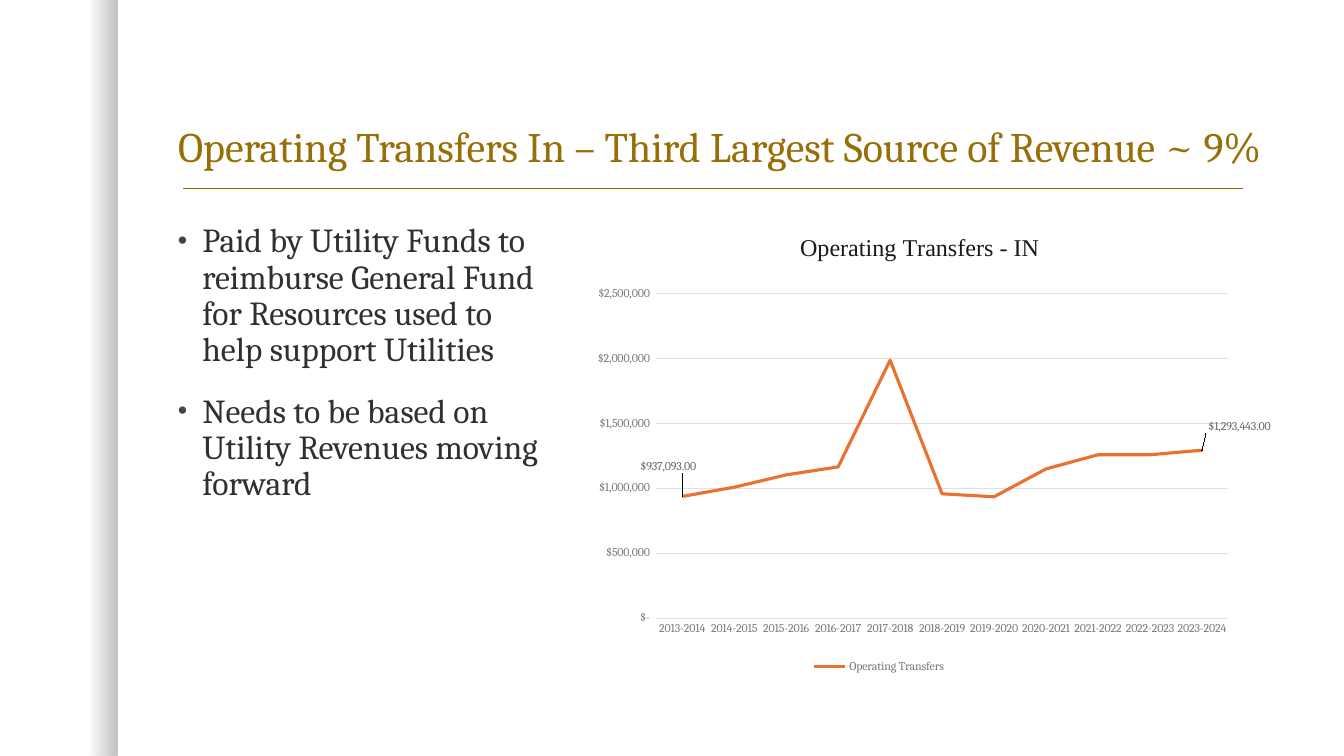
from dataclasses import dataclass

from lxml import etree
from pptx import Presentation
from pptx import util as u
from pptx.chart.data import CategoryChartData
from pptx.dml.color import RGBColor
from pptx.enum import chart as ch
from pptx.enum import shapes, text
from pptx.oxml import ns, parse_xml

COLUMNS, ROWS = 160, 90
SLIDE_W, SLIDE_H = u.Inches(13.33), u.Inches(7.5)

GOLD = RGBColor(0x98, 0x6F, 0x07)
INK = RGBColor(0x30, 0x30, 0x30)
BULLET_GRAY = "454545"
BLACK = RGBColor(0, 0, 0)
TITLE_BLACK = RGBColor(0x1A, 0x1A, 0x1A)
AXIS_GRAY = RGBColor(0x78, 0x78, 0x78)
LABEL_GRAY = RGBColor(0x64, 0x64, 0x64)
GRID_GRAY = RGBColor(0xE0, 0xE0, 0xE0)
ORANGE = RGBColor(0xE9, 0x71, 0x32)

SERIF = "Cambria"
SMALL = 8.5
HANGING = u.Pt(17.5)
AXIS_FORMAT = '_("$"* #,##0_);_("$"* \\(#,##0\\);_("$"* "-"_);_(@_)'
LABEL_FORMAT = '_("$"* #,##0.00_);_("$"* \\(#,##0.00\\);_("$"* "-"??_);_(@_)'
NO_LEADER_LINES = (
    '<c:extLst xmlns:c="http://schemas.openxmlformats.org/drawingml/2006/chart">'
    '<c:ext uri="{CE6537A1-D6FC-4f65-9D91-7224C49458BB}" '
    'xmlns:c15="http://schemas.microsoft.com/office/drawing/2012/chart">'
    '<c15:showLeaderLines val="0"/></c:ext></c:extLst>'
)


@dataclass(frozen=True)
class Area:
    col: float
    row: float
    cols: float
    rows: float

    def box(self) -> tuple[int, int, int, int]:
        return (
            int(SLIDE_W * self.col / COLUMNS),
            int(SLIDE_H * self.row / ROWS),
            int(SLIDE_W * self.cols / COLUMNS),
            int(SLIDE_H * self.rows / ROWS),
        )


@dataclass(frozen=True)
class PointLabel:
    index: int
    position: ch.XL_LABEL_POSITION
    dx: float
    dy: float


BAND = Area(0, 0, 14, 90)
TITLE = Area(20, 5, 138, 16)
RULE = Area(21.75, 22.44, 126.25, 0)
BODY = Area(20, 26.05, 47, 55)
CHART = Area(69, 26, 83, 56)

BULLETS = [
    "Paid by Utility Funds to reimburse General Fund for Resources used to help support Utilities",
    "Needs to be based on Utility Revenues moving forward",
]
FIRST_YEAR = 2013
TRANSFERS = [
    937093, 1008088, 1103002, 1164658, 1986884.4, 957404.51,
    934496, 1149067.28, 1258091.5, 1258091.5, 1293443,
]
POINT_LABELS = [
    PointLabel(0, ch.XL_LABEL_POSITION.ABOVE, -0.02, -0.04),
    PointLabel(len(TRANSFERS) - 1, ch.XL_LABEL_POSITION.RIGHT, 0, -0.05),
]


def style(font, size: float, color: RGBColor, name: str = SERIF) -> None:
    font.size = u.Pt(size)
    font.name = name
    font.bold = False
    font.color.rgb = color


def place(element, index: int, **values: float | str) -> None:
    for old in element.findall(ns.qn("c:layout")):
        element.remove(old)
    layout = etree.Element(ns.qn("c:layout"))
    manual = etree.SubElement(layout, ns.qn("c:manualLayout"))
    for tag, value in values.items():
        etree.SubElement(manual, ns.qn(f"c:{tag}"), val=str(value))
    element.insert(index, layout)


def add_band(slide) -> None:
    sp = slide.shapes.add_shape(shapes.MSO_SHAPE.RECTANGLE, *BAND.box())
    sp.shadow.inherit = False
    sp.line.fill.background()
    sp.fill.gradient()
    sp.fill.gradient_angle = 0
    for stop, position in zip(sp.fill.gradient_stops, (0.75, 1)):
        stop.position = position
        stop.color.rgb = BLACK
    for color, alpha in zip(sp.element.xpath(".//a:gs/a:srgbClr"), (0, 25000)):
        etree.SubElement(color, ns.qn("a:alpha"), val=str(alpha))


def add_rule(slide) -> None:
    x, y, w, h = RULE.box()
    line = slide.shapes.add_connector(shapes.MSO_CONNECTOR.STRAIGHT, x, y, x + w, y + h)
    line.line.color.rgb = GOLD
    line.line.width = u.Pt(1)
    etree.SubElement(line.element.spPr, ns.qn("a:effectLst"))


def set_title(slide) -> None:
    sp = slide.shapes.title
    sp.left, sp.top, sp.width, sp.height = TITLE.box()
    tf = sp.text_frame
    tf.text = "Operating Transfers In – Third Largest Source of Revenue ~ 9%"
    tf.word_wrap = True
    tf.auto_size = text.MSO_AUTO_SIZE.NONE
    tf.vertical_anchor = text.MSO_ANCHOR.BOTTOM
    p = tf.paragraphs[0]
    p.alignment = text.PP_ALIGN.LEFT
    p.line_spacing = 0.9
    style(p.font, 30, GOLD)


def add_bullets(slide) -> None:
    tf = slide.shapes.add_textbox(*BODY.box()).text_frame
    tf.word_wrap = True
    for i, item in enumerate(BULLETS):
        p = tf.add_paragraph() if i else tf.paragraphs[0]
        p.text = item
        p.line_spacing = 0.9
        p.space_before = u.Pt(18 if i else 0)
        props = p._p.get_or_add_pPr()
        props.set("marL", str(HANGING))
        props.set("indent", str(-HANGING))
        color = etree.SubElement(props, ns.qn("a:buClr"))
        etree.SubElement(color, ns.qn("a:srgbClr"), val=BULLET_GRAY)
        etree.SubElement(props, ns.qn("a:buSzPct"), val="80000")
        etree.SubElement(props, ns.qn("a:buFont"), typeface="Arial")
        etree.SubElement(props, ns.qn("a:buChar"), char="•")
        style(p.font, 24, INK)


def label_point(series, label: PointLabel) -> None:
    data_label = series.points[label.index].data_label
    data_label.position = label.position
    style(data_label.font, SMALL, LABEL_GRAY)
    element = series.data_labels._element.xpath(f"c:dLbl[c:idx/@val={label.index}]")[0]
    place(element, 1, x=label.dx, y=label.dy)
    number = etree.Element(ns.qn("c:numFmt"), formatCode=LABEL_FORMAT, sourceLinked="0")
    element.insert(2, number)


def format_axes(chart) -> None:
    years, dollars = chart.category_axis, chart.value_axis
    for axis in (years, dollars):
        axis.major_tick_mark = axis.minor_tick_mark = ch.XL_TICK_MARK.NONE
        style(axis.tick_labels.font, SMALL, AXIS_GRAY)
    for line in (years.format.line, dollars.major_gridlines.format.line):
        line.color.rgb = GRID_GRAY
        line.width = u.Pt(0.75)
    chart.element.xpath(".//c:catAx/c:txPr/a:bodyPr")[0].set("rot", "-60000000")
    dollars.minimum_scale, dollars.maximum_scale, dollars.major_unit = 0, 2500000, 500000
    dollars.format.line.fill.background()
    dollars.tick_labels.number_format = AXIS_FORMAT
    dollars.tick_labels.number_format_is_linked = False


def add_transfers_chart(slide) -> None:
    data = CategoryChartData(number_format=LABEL_FORMAT)
    data.categories = [f"{FIRST_YEAR + i}-{FIRST_YEAR + i + 1}" for i in range(len(TRANSFERS))]
    data.add_series("Operating Transfers", TRANSFERS)
    chart = slide.shapes.add_chart(ch.XL_CHART_TYPE.LINE, *CHART.box(), data).chart
    style(chart.font, 10, INK)

    chart.has_title = True
    title = chart.chart_title
    p = title.text_frame.paragraphs[0]
    p.text = "Operating Transfers - IN"
    style(p.font, 17.2, TITLE_BLACK, "Times New Roman")
    place(title._element, 1, xMode="edge", yMode="edge", x=0.31, y=0.02)

    chart.has_legend = True
    legend = chart.legend
    legend.position = ch.XL_LEGEND_POSITION.BOTTOM
    legend.include_in_layout = False
    style(legend.font, SMALL, AXIS_GRAY)
    place(legend._element, 1, xMode="edge", yMode="edge", x=0.33, y=0.93)

    format_axes(chart)
    place(chart.element.xpath(".//c:plotArea")[0], 0, layoutTarget="inner",
          xMode="edge", yMode="edge", x=0.11, y=0.16, w=0.82, h=0.69)

    plot = chart.plots[0]
    plot.vary_by_categories = False
    series = plot.series[0]
    series.smooth = False
    series.marker.style = ch.XL_MARKER_STYLE.NONE
    series.format.line.color.rgb = ORANGE
    series.format.line.width = u.Pt(2.25)
    series.data_labels.show_value = False
    for label in POINT_LABELS:
        label_point(series, label)
    labels = series.data_labels._element
    for old in labels.findall(ns.qn("c:showLeaderLines")):
        labels.remove(old)
    labels.append(parse_xml(NO_LEADER_LINES))


def main() -> None:
    prs = Presentation()
    prs.slide_width, prs.slide_height = SLIDE_W, SLIDE_H
    slide = prs.slides.add_slide(prs.slide_layouts[5])
    add_band(slide)
    add_rule(slide)
    set_title(slide)
    add_bullets(slide)
    add_transfers_chart(slide)
    prs.save("out.pptx")


if __name__ == "__main__":
    main()
